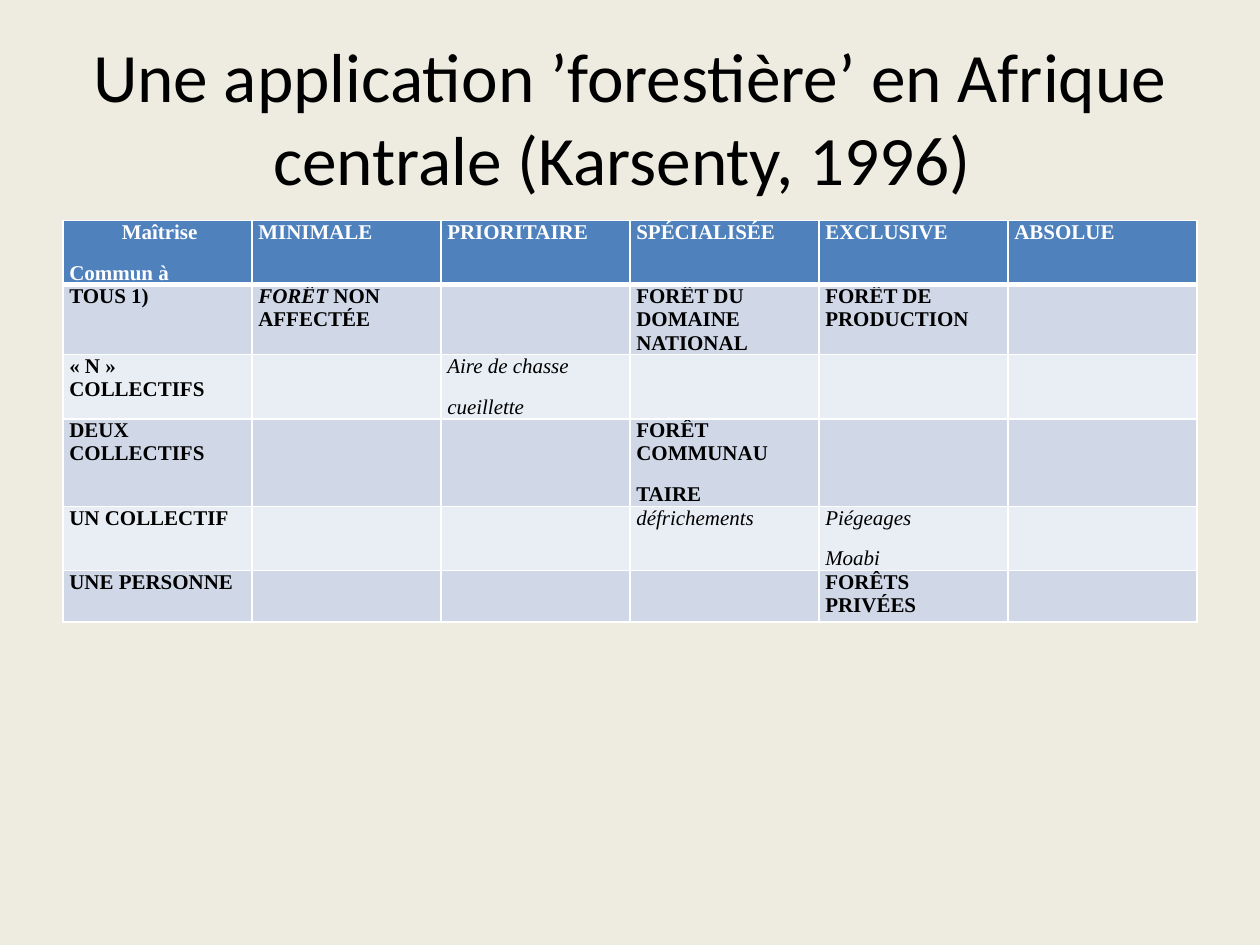
import pptx
import pptx.util
import pptx.dml.color
import pptx.enum.text
import lxml.etree

Pt = pptx.util.Pt

# Content: a cell is a list of paragraphs, a paragraph a list of (text, style) runs
TITLE = "Une application ’forestière’ en Afrique centrale (Karsenty, 1996) "


def bold(*lines):
    return [[(line, "b")] for line in lines]


def slant(*lines):
    return [[(line, "i")] for line in lines]


HEADS = [
    bold("Maîtrise", "Commun à"), bold("MINIMALE"), bold("PRIORITAIRE"),
    bold("SPÉCIALISÉE"), bold("EXCLUSIVE"), bold("ABSOLUE"),
]
ROWS = [
    [bold("TOUS 1)"), [[("FORÊT", "bi"), (" NON AFFECTÉE", "b")]], [],
     bold("FORÊT DU DOMAINE NATIONAL"), bold("FORÊT DE PRODUCTION"), []],
    [bold("« N » COLLECTIFS"), [], slant("Aire de chasse", "cueillette"), [], [], []],
    [bold("DEUX COLLECTIFS"), [], [], bold("FORÊT COMMUNAU", "TAIRE"), [], []],
    [bold("UN COLLECTIF"), [], [], slant("défrichements"),
     slant("Piégeages", "Moabi"), []],
    [bold("UNE PERSONNE"), [], [], [], bold("FORÊTS PRIVÉES"), []],
]
HEAD, BANDS = "4F81BD", ("D0D8E8", "E9EDF4")
WHITE, BLACK, PAPER = "FFFFFF", "000000", "EEECE1"
LEFT, WIDTH, TOP, HIGH = 36, 648, 126, 29.5
INDENT = 30


def paint(fill, code):
    fill.solid()
    fill.fore_color.rgb = pptx.dml.color.RGBColor.from_string(code)


def write(para, text, font, size, code, style=""):
    run = para.add_run()
    run.text = text
    run.font.name, run.font.size = font, Pt(size)
    run.font.bold, run.font.italic = "b" in style, "i" in style
    paint(run.font.fill, code)


def edge(cell, side, width):
    ns = "{http://schemas.openxmlformats.org/drawingml/2006/main}"
    props = cell._tc.get_or_add_tcPr()
    line = lxml.etree.SubElement(props, ns + side, w=str(Pt(width)))
    solid = lxml.etree.SubElement(line, ns + "solidFill")
    lxml.etree.SubElement(solid, ns + "srgbClr", val=WHITE)


def fill_cell(cell, paras, back, ink, base):
    cell.margin_left = cell.margin_right = Pt(3.6)
    cell.margin_top = cell.margin_bottom = 0
    for side, width in (("lnL", 1), ("lnR", 1), ("lnT", 1), ("lnB", base)):
        edge(cell, side, width)
    paint(cell.fill, back)
    frame = cell.text_frame
    for n, runs in enumerate(paras):
        para = frame.add_paragraph() if n else frame.paragraphs[0]
        para.space_after = Pt(10)
        for text, style in runs:
            write(para, text, "Times New Roman", 12, ink, style)


# Slide
deck = pptx.Presentation()
deck.slide_width, deck.slide_height = Pt(720), Pt(540)
slide = deck.slides.add_slide(deck.slide_layouts[5])
paint(slide.background.fill, PAPER)

# Title
title = slide.shapes.title
title.left, title.top, title.width, title.height = Pt(LEFT), Pt(21.6), Pt(WIDTH), Pt(90)
frame = title.text_frame
frame.auto_size = pptx.enum.text.MSO_AUTO_SIZE.NONE
frame.word_wrap = True
frame.vertical_anchor = pptx.enum.text.MSO_ANCHOR.MIDDLE
frame.paragraphs[0].alignment = pptx.enum.text.PP_ALIGN.CENTER
write(frame.paragraphs[0], TITLE, "Calibri", 39.6, BLACK)

# Table: rows grow with their text
grid = [HEADS] + ROWS
table = slide.shapes.add_table(len(grid), len(HEADS), Pt(LEFT), Pt(TOP),
                               Pt(WIDTH), Pt(HIGH * len(grid))).table
for col in table.columns:
    col.width = Pt(WIDTH / len(HEADS))
for r, row in enumerate(grid):
    table.rows[r].height = Pt(HIGH)
    look = (BANDS[(r - 1) % 2], BLACK, 1) if r else (HEAD, WHITE, 3)
    for c, paras in enumerate(row):
        fill_cell(table.cell(r, c), paras, *look)

# The corner's first line is set in from the left
first = table.cell(0, 0).text_frame.paragraphs[0]
first._p.get_or_add_pPr().set("marL", str(Pt(INDENT)))

deck.save("out.pptx")
